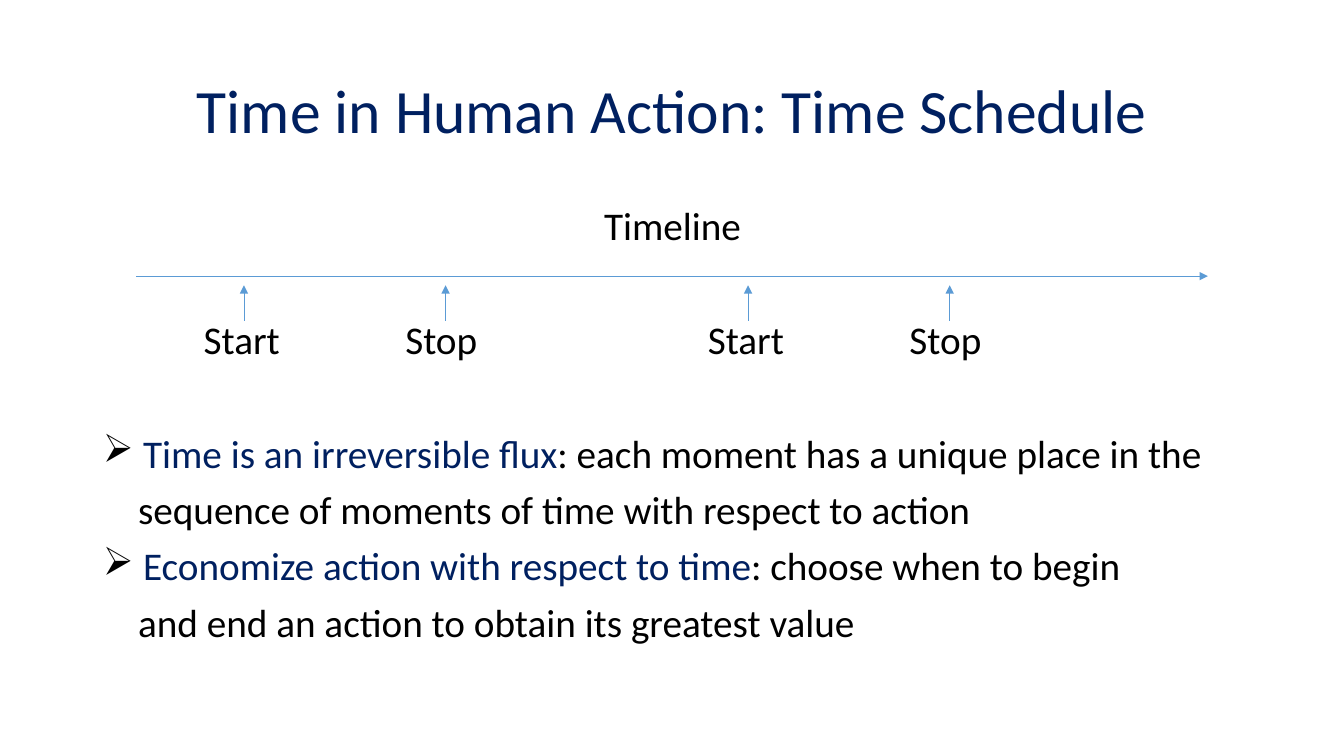
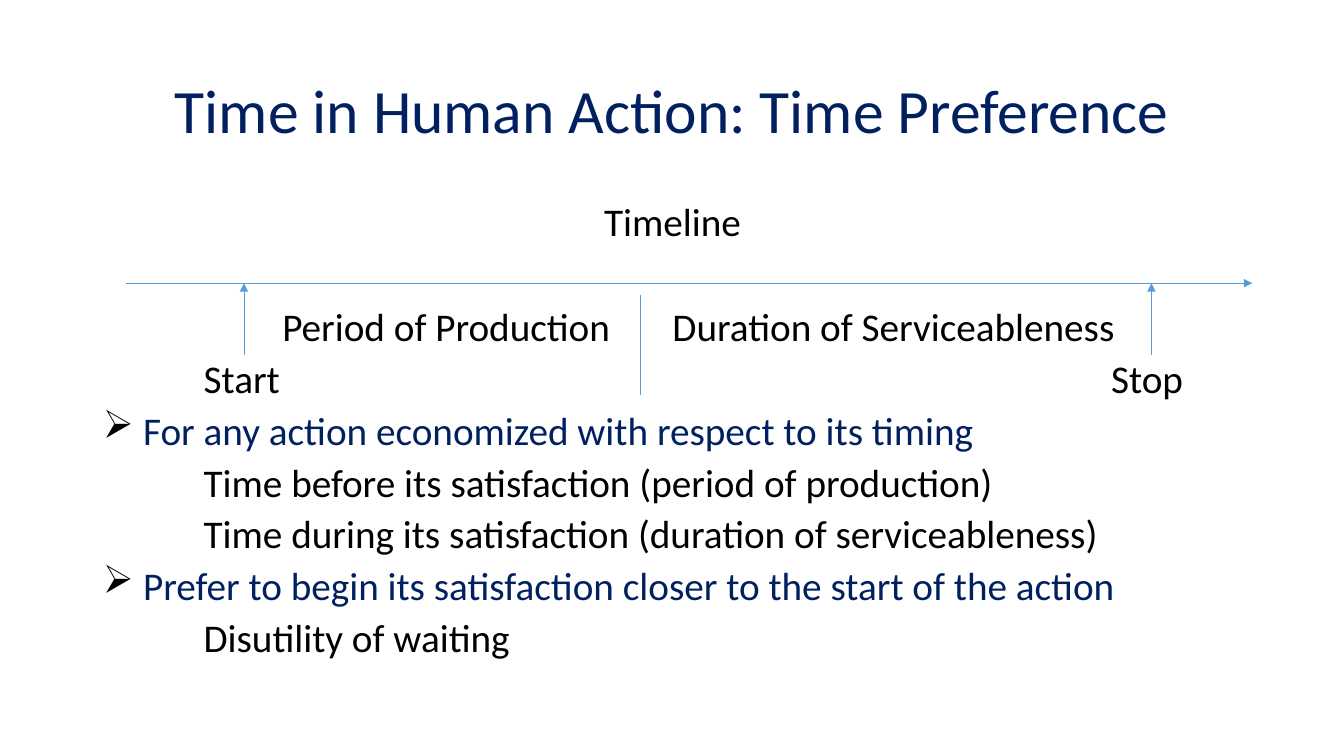
from lxml import etree
from pptx import Presentation
from pptx.dml.color import RGBColor
from pptx.enum.shapes import MSO_CONNECTOR
from pptx.enum.text import MSO_ANCHOR, PP_ALIGN
from pptx.oxml.ns import qn
from pptx.util import Inches, Pt

LINE = MSO_CONNECTOR.STRAIGHT
MIDDLE = MSO_ANCHOR.MIDDLE
LEFT, CENTER = PP_ALIGN.LEFT, PP_ALIGN.CENTER

COLORS = {"navy": "002060", "black": "000000", "blue": "5B9BD5"}
FONT = "Calibri"
SIZE = 28
BODY = (1.02, 2.05, 11.3, 4.66)
TITLE = (0.92, 0.4, 11.5, 1.45)
HANG, WRAP, SUB = 0.4, 0.35, 1
MARK = 0.8


def rgb(name):
    return RGBColor.from_string(COLORS[name])


def add_run(para, text, color="black", size=SIZE):
    run = para.add_run()
    run.text = text
    run.font.name = FONT
    run.font.size = Pt(size)
    run.font.color.rgb = rgb(color)


def add_box(slide, left, top, width, height, gap=0):
    box = slide.shapes.add_textbox(*map(Inches, (left, top, width, height)))
    frame = box.text_frame
    frame.word_wrap = True
    frame.margin_left = frame.margin_right = frame.margin_bottom = 0
    frame.margin_top = Inches(gap)
    return box


def add_label(slide, text, left, top, width, pitch, align=LEFT, gap=0):
    box = add_box(slide, left, top, width, 0.45 + gap, gap)
    para = box.text_frame.paragraphs[0]
    para.alignment = align
    para.line_spacing = pitch
    add_run(para, text)
    return box


def add_line(slide, start, end, arrow=True):
    line = slide.shapes.add_connector(LINE, *map(Inches, start + end))
    line.line.color.rgb = rgb("blue")
    line.line.width = Pt(0.5)
    props = line._element.spPr
    if arrow:
        tip = etree.SubElement(props.find(qn("a:ln")), qn("a:tailEnd"))
        tip.set("type", "triangle")
    etree.SubElement(props, qn("a:effectLst"))
    return line


def add_bullet(para):
    props = para._p.get_or_add_pPr()
    tint = etree.SubElement(props, qn("a:buClr"))
    etree.SubElement(tint, qn("a:srgbClr")).set("val", COLORS["black"])
    etree.SubElement(props, qn("a:buChar")).set("char", "➢")


def add_title(slide, text):
    title = slide.shapes.title
    title.left, title.top, title.width, title.height = map(Inches, TITLE)
    frame = title.text_frame
    frame.vertical_anchor = MIDDLE
    para = frame.paragraphs[0]
    para.alignment = CENTER
    para.line_spacing = 0.9
    add_run(para, text, "navy", 44)


def add_axis(slide, box, axis, pitch):
    left, top, width, _ = box
    start, end, drop = axis
    add_label(slide, "Timeline", left, top, width, pitch, CENTER)
    add_line(slide, (left + start, top + drop), (left + end, top + drop))


def add_marks(slide, box, marks, drop, tip, pitch, gap=0):
    left, top = box[:2]
    for text, tab in marks:
        label = add_label(slide, text, left + tab, top + drop, MARK, pitch, gap=gap)
        mid = left + tab + MARK / 2
        arrow = add_line(slide, (mid, top + drop), (mid, top + tip))
        arrow.begin_connect(label, 0)


def add_points(slide, box, drop, rows, pitch):
    left, top, width, height = box
    frame = add_box(slide, left, top + drop, width, height - drop).text_frame
    for i, (indent, runs) in enumerate(rows):
        para = frame.paragraphs[0] if i == 0 else frame.add_paragraph()
        para.alignment = LEFT
        para.line_spacing = pitch
        para.space_before = Pt(10 if i else 0)
        props = para._p.get_or_add_pPr()
        props.set("marL", str(Inches(indent)))
        if indent == HANG:
            props.set("indent", str(-Inches(indent)))
            add_bullet(para)
        for text, color in runs:
            add_run(para, text, color)


def schedule(slide, box):
    pitch = 0.9
    add_title(slide, "Time in Human Action: Time Schedule")
    add_axis(slide, box, (0.33, 10.96, 0.69), pitch)
    marks = [("Start", 1), ("Stop", 3), ("Start", 6), ("Stop", 8)]
    add_marks(slide, box, marks, 1.13, 0.78, pitch)
    add_points(slide, box, 2.26, [
        (HANG, [("Time is an irreversible flux", "navy"),
                (": each moment has a unique place in the", "black")]),
        (WRAP, [("sequence of moments of time with respect to action", "black")]),
        (HANG, [("Economize action with respect to time", "navy"),
                (": choose when to begin", "black")]),
        (WRAP, [("and end an action to obtain its greatest value", "black")]),
    ], pitch)


def preference(slide, box):
    pitch = 0.8
    left, top = box[:2]
    add_title(slide, "Time in Human Action: Time Preference")
    add_axis(slide, box, (0.23, 11.4, 0.76), pitch)
    add_marks(slide, box, [("Start", 1), ("Stop", 10)], 1.47, 0.76, pitch, 0.09)
    for text, tab, width in (("Period of Production", 1.78, 3.4),
                             ("Duration of Serviceableness", 5.65, 4.6)):
        add_label(slide, text, left + tab, top + 1.04, width, pitch)
    split = left + 5.33
    add_line(slide, (split, top + 0.88), (split, top + 1.87), False)
    add_points(slide, box, 2.07, [
        (HANG, [("For any action economized with respect to its timing", "navy")]),
        (SUB, [("Time before its satisfaction (period of production)", "black")]),
        (SUB, [("Time during its satisfaction (duration of serviceableness)", "black")]),
        (HANG, [("Prefer to begin its satisfaction closer to the start of the action",
                 "navy")]),
        (SUB, [("Disutility of waiting", "black")]),
    ], pitch)


def main():
    deck = Presentation()
    deck.slide_width, deck.slide_height = Inches(13.33), Inches(7.5)
    for build in (schedule, preference):
        build(deck.slides.add_slide(deck.slide_layouts[5]), BODY)
    deck.save("out.pptx")


if __name__ == "__main__":
    main()
